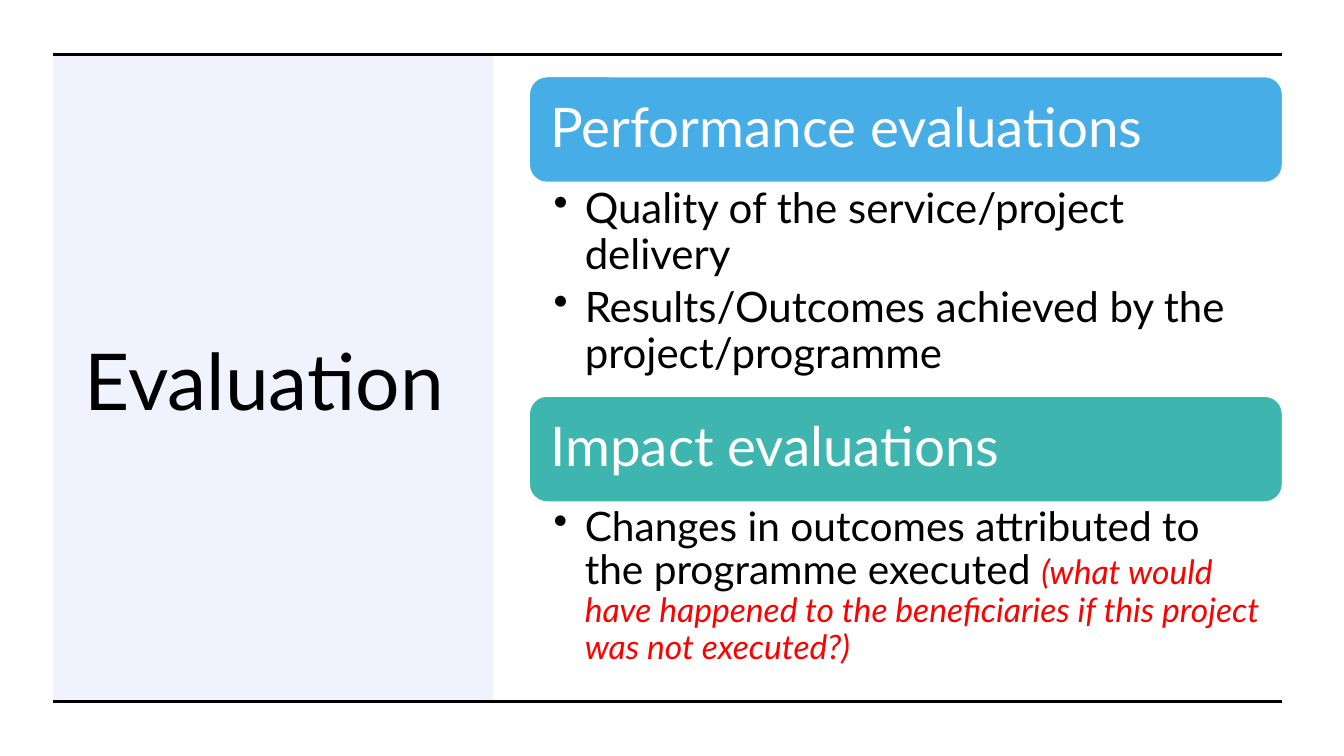
"""Builds the Evaluation slide with its two kinds of evaluation."""
from dataclasses import dataclass

from lxml import etree
from pptx import Presentation
from pptx.dml.color import RGBColor
from pptx.enum.shapes import MSO_CONNECTOR, MSO_SHAPE
from pptx.enum.text import MSO_ANCHOR
from pptx.oxml.ns import qn
from pptx.util import Inches, Pt

RECTANGLE = MSO_SHAPE.RECTANGLE
ROUNDED = MSO_SHAPE.ROUNDED_RECTANGLE
STRAIGHT = MSO_CONNECTOR.STRAIGHT
MIDDLE = MSO_ANCHOR.MIDDLE
TOP = MSO_ANCHOR.TOP

FONT = "Lato"
COLOURS = {
    "black": "000000",
    "white": "FFFFFF",
    "red": "FF0000",
    "panel": "708CEC",
    "blue": "46ADE7",
    "teal": "3EB5AE",
}
LEFT, RIGHT = 0.53, 12.72
RULE_TOP, RULE_BOTTOM = 0.54, 6.96
COLUMN_LEFT, COLUMN_WIDTH = 5.25, 7.47
BAR_HEIGHT = 1.05
BULLET_INDENT = 0.31


@dataclass(frozen=True)
class Span:
    text: str
    size: float
    colour: str = "black"
    italic: bool = False


@dataclass(frozen=True)
class Section:
    heading: str
    colour: str
    top: float
    body_height: float
    body_insets: tuple[float, float, float, float]
    bullets: tuple[tuple[Span, ...], ...]


SECTIONS = (
    Section(
        "Performance evaluations", "blue", 0.76, 2.12, (0.24, 0.05, 0.3, 0.05),
        (
            (Span("Quality of the service/project delivery", 30),),
            (Span("Results/Outcomes achieved by the project/programme", 30),),
        ),
    ),
    Section(
        "Impact evaluations", "teal", 3.93, 1.77, (0.24, 0.04, 0.23, 0.04),
        (
            (
                Span("Changes in outcomes attributed to the programme executed ", 29),
                Span("(what would have happened to the beneficiaries "
                     "if this project was not executed?)", 24, "red", True),
            ),
        ),
    ),
)


def rgb(name: str) -> RGBColor:
    return RGBColor.from_string(COLOURS[name])


def set_frame(frame, insets: tuple[float, float, float, float], anchor) -> None:
    frame.word_wrap = True
    frame.vertical_anchor = anchor
    (frame.margin_left, frame.margin_top,
     frame.margin_right, frame.margin_bottom) = map(Inches, insets)


def add_spans(para, spans: tuple[Span, ...]) -> None:
    para.line_spacing = 0.9
    for span in spans:
        run = para.add_run()
        run.text = span.text
        run.font.name = FONT
        run.font.size = Pt(span.size)
        run.font.italic = span.italic
        run.font.color.rgb = rgb(span.colour)


def add_bullet(para) -> None:
    properties = para._p.get_or_add_pPr()
    properties.set("marL", str(Inches(BULLET_INDENT)))
    properties.set("indent", str(-Inches(BULLET_INDENT)))
    etree.SubElement(properties, qn("a:buChar")).set("char", "•")


def add_box(page, kind, left: float, top: float, width: float, height: float,
            colour: str):
    box = page.shapes.add_shape(kind, *map(Inches, (left, top, width, height)))
    box.shadow.inherit = False
    box.fill.solid()
    box.fill.fore_color.rgb = rgb(colour)
    box.line.fill.background()
    return box


def add_panel(page) -> None:
    panel = add_box(page, RECTANGLE, LEFT, RULE_TOP, 4.36,
                    RULE_BOTTOM - RULE_TOP, "panel")
    colour = panel._element.spPr.find(qn("a:solidFill")).find(qn("a:srgbClr"))
    etree.SubElement(colour, qn("a:alpha")).set("val", "10000")


def add_title(page) -> None:
    title = page.shapes.add_textbox(*map(Inches, (0.74, 1.07, 3.89, 5.5)))
    set_frame(title.text_frame, (0.1, 0.05, 0.1, 0.05), MIDDLE)
    add_spans(title.text_frame.paragraphs[0], (Span("Evaluation", 56),))


def add_rule(page, top: float) -> None:
    rule = page.shapes.add_connector(
        STRAIGHT, *map(Inches, (LEFT, top, RIGHT, top)))
    rule.line.color.rgb = rgb("black")
    rule.line.width = Pt(2.25)
    etree.SubElement(rule._element.spPr, qn("a:effectLst"))


def add_section(page, section: Section) -> None:
    bar = add_box(page, ROUNDED, COLUMN_LEFT, section.top, COLUMN_WIDTH,
                  BAR_HEIGHT, section.colour)
    bar.line.color.rgb = rgb("white")
    bar.line.width = Pt(1)
    set_frame(bar.text_frame, (0.16,) * 4, MIDDLE)
    heading = bar.text_frame.paragraphs[0]
    heading.alignment = 1
    add_spans(heading, (Span(section.heading, 39, "white"),))

    body = page.shapes.add_textbox(*map(Inches, (
        COLUMN_LEFT, section.top + BAR_HEIGHT, COLUMN_WIDTH, section.body_height)))
    frame = body.text_frame
    set_frame(frame, section.body_insets, TOP)
    for index, spans in enumerate(section.bullets):
        para = frame.add_paragraph() if index else frame.paragraphs[0]
        add_spans(para, spans)
        para.space_after = Pt(6)
        add_bullet(para)


def main() -> None:
    deck = Presentation()
    deck.slide_width, deck.slide_height = Inches(13.33), Inches(7.5)
    page = deck.slides.add_slide(deck.slide_layouts[6])
    add_panel(page)
    add_title(page)
    for top in (RULE_TOP, RULE_BOTTOM):
        add_rule(page, top)
    for section in SECTIONS:
        add_section(page, section)
    deck.save("out.pptx")


if __name__ == "__main__":
    main()
